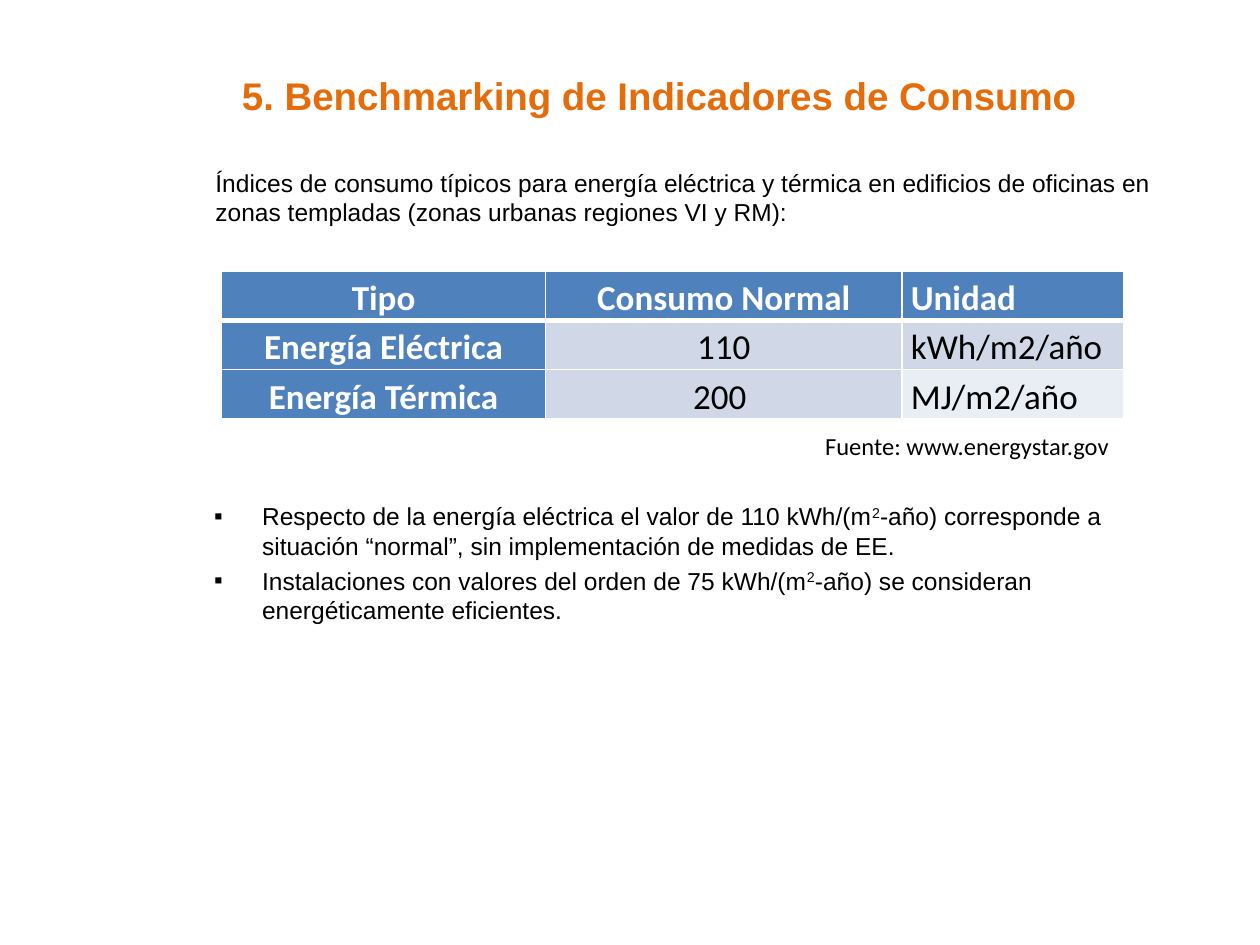
"""Build the slide on benchmarking of energy consumption indicators."""
from dataclasses import dataclass

from lxml import etree
from pptx import Presentation
from pptx import util as u
from pptx.dml.color import RGBColor
from pptx.enum import text
from pptx.oxml import ns

BLACK = RGBColor(0x00, 0x00, 0x00)
WHITE = RGBColor(0xFF, 0xFF, 0xFF)
ORANGE = RGBColor(0xE4, 0x6C, 0x0A)
BLUE = RGBColor(0x4F, 0x81, 0xBD)
PALE_BLUE = RGBColor(0xD0, 0xD8, 0xE8)
PALEST_BLUE = RGBColor(0xE9, 0xED, 0xF4)

CENTER = text.PP_ALIGN.CENTER
LEFT = text.PP_ALIGN.LEFT


@dataclass(frozen=True)
class Box:
    left: float
    top: float
    width: float
    height: float

    def lengths(self) -> tuple:
        return tuple(map(u.Inches, (self.left, self.top, self.width, self.height)))


@dataclass(frozen=True)
class Row:
    labels: tuple[str, str, str]
    fills: tuple[RGBColor, RGBColor, RGBColor]


TITLE_BOX = Box(1.82, 0.52, 7.19, 0.45)
INTRO_BOX = Box(1.61, 1.28, 7.89, 1.22)
TABLE_BOX = Box(1.76, 2.15, 7.16, 1.17)
SOURCE_BOX = Box(6.45, 3.37, 2.48, 0.34)
BULLETS_BOX = Box(1.6, 3.93, 7.9, 2.77)

COLUMN_WIDTHS = (2.57, 2.83, 1.76)
ROWS = (
    Row(("Tipo", "Consumo Normal", "Unidad"), (BLUE, BLUE, BLUE)),
    Row(("Energía Eléctrica", "110", "kWh/m2/año"), (BLUE, PALE_BLUE, PALE_BLUE)),
    Row(("Energía Térmica", "200 ", "MJ/m2/año"), (BLUE, PALE_BLUE, PALEST_BLUE)),
)
INTRO = (
    "Índices de consumo típicos para energía eléctrica y térmica en edificios "
    "de oficinas en zonas templadas (zonas urbanas regiones VI y RM):"
)
BULLETS = (
    ("Respecto de la energía eléctrica el valor de 110 kWh/(m", "2",
     "-año) corresponde a situación “normal”, sin implementación de medidas de EE."),
    ("Instalaciones con valores del orden de 75 kWh/(m", "2",
     "-año) se consideran energéticamente eficientes."),
)


def write(paragraph, *parts: str, size: float = 14, font: str = "Arial",
          color: RGBColor = BLACK, bold: bool = False, align=LEFT,
          line_spacing: float = 1.0, space_before: float = 0) -> None:
    """Write parts as runs, raising every second one as superscript."""
    paragraph.alignment = align
    paragraph.line_spacing = line_spacing
    paragraph.space_before = u.Pt(space_before)
    for index, part in enumerate(parts):
        run = paragraph.add_run()
        run.text = part
        run.font.size = u.Pt(size)
        run.font.name = font
        run.font.bold = bold
        run.font.color.rgb = color
        if index % 2:
            run.font._element.set("baseline", "30000")


def set_bullet(paragraph, character: str = "", indent: float = 0) -> None:
    """Give a paragraph a hanging bullet, or none."""
    properties = paragraph._p.get_or_add_pPr()
    properties.set("marL", str(u.Inches(indent)))
    properties.set("indent", str(-u.Inches(indent)))
    if character:
        etree.SubElement(properties, ns.qn("a:buFont"), typeface="Arial")
        etree.SubElement(properties, ns.qn("a:buChar"), char=character)
    else:
        etree.SubElement(properties, ns.qn("a:buNone"))


def place(shape, box: Box, wrap: bool = True):
    """Move a shape to its box and return its top-anchored text frame."""
    shape.left, shape.top, shape.width, shape.height = box.lengths()
    frame = shape.text_frame
    frame.word_wrap = wrap
    frame.auto_size = text.MSO_AUTO_SIZE.NONE
    frame.vertical_anchor = text.MSO_ANCHOR.TOP
    return frame


def set_borders(cell, bottom: float) -> None:
    """Draw white cell borders with the given bottom width in points."""
    properties = cell._tc.get_or_add_tcPr()
    widths = {"lnL": 1, "lnR": 1, "lnT": 1, "lnB": bottom}
    for index, (side, width) in enumerate(widths.items()):
        line = etree.Element(ns.qn(f"a:{side}"), w=str(u.Pt(width)))
        fill = etree.SubElement(line, ns.qn("a:solidFill"))
        etree.SubElement(fill, ns.qn("a:srgbClr"), val=str(WHITE))
        properties.insert(index, line)


def add_consumption_table(slide) -> None:
    """Add the table of typical consumption."""
    table = slide.shapes.add_table(
        len(ROWS), len(COLUMN_WIDTHS), *TABLE_BOX.lengths()).table
    for column, width in zip(table.columns, COLUMN_WIDTHS):
        column.width = u.Inches(width)
    for row_index, row in enumerate(ROWS):
        for column_index, (label, fill) in enumerate(zip(row.labels, row.fills)):
            cell = table.cell(row_index, column_index)
            cell.margin_left = cell.margin_right = u.Inches(0.07)
            cell.margin_top = cell.margin_bottom = 0
            cell.fill.solid()
            cell.fill.fore_color.rgb = fill
            set_borders(cell, bottom=1 if row_index else 3)
            heading = fill == BLUE
            write(cell.text_frame.paragraphs[0], label, size=20, font="Calibri",
                  color=WHITE if heading else BLACK, bold=heading,
                  align=LEFT if column_index == 2 else CENTER, line_spacing=1.15)


def main() -> None:
    """Build and save the presentation."""
    presentation = Presentation()
    presentation.slide_width = u.Inches(10)
    presentation.slide_height = u.Inches(7.5)
    slide = presentation.slides.add_slide(
        presentation.slide_layouts.get_by_name("Two Content"))
    title, intro, bullets = list(slide.placeholders)[:3]

    write(place(title, TITLE_BOX).paragraphs[0],
          "5. Benchmarking de Indicadores de Consumo",
          size=22, color=ORANGE, bold=True)

    intro_paragraph = place(intro, INTRO_BOX).paragraphs[0]
    set_bullet(intro_paragraph)
    write(intro_paragraph, INTRO)

    add_consumption_table(slide)

    source = slide.shapes.add_textbox(*SOURCE_BOX.lengths())
    write(place(source, SOURCE_BOX, wrap=False).paragraphs[0],
          "Fuente: www.energystar.gov", font="Calibri")

    frame = place(bullets, BULLETS_BOX)
    for index, parts in enumerate(BULLETS):
        paragraph = frame.add_paragraph() if index else frame.paragraphs[0]
        set_bullet(paragraph, "▪", 0.38)
        write(paragraph, *parts, space_before=3 if index else 0)

    presentation.save("out.pptx")


if __name__ == "__main__":
    main()
